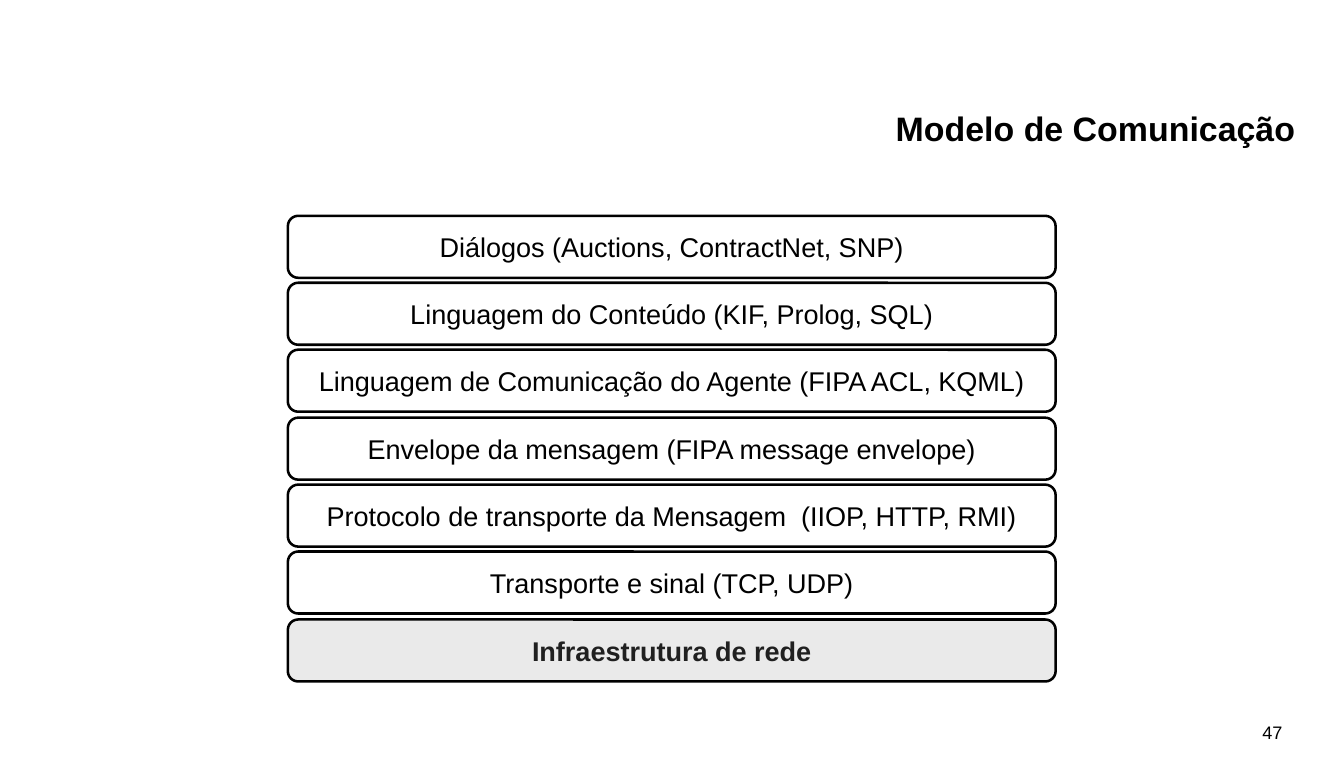
from pptx import Presentation
from pptx.dml.color import RGBColor
from pptx.enum.shapes import MSO_SHAPE as SHAPE
from pptx.enum.text import MSO_ANCHOR as ANCHOR, PP_ALIGN as ALIGN
from pptx.util import Emu, Inches, Pt

EMU_PER_PX = 914400 / 122

LAYERS = [
    "Diálogos (Auctions, ContractNet, SNP)",
    "Linguagem do Conteúdo (KIF, Prolog, SQL)",
    "Linguagem de Comunicação do Agente (FIPA ACL, KQML)",
    "Envelope da mensagem (FIPA message envelope)",
    "Protocolo de transporte da Mensagem  (IIOP, HTTP, RMI)",
    "Transporte e sinal (TCP, UDP)",
]
STACK_TOP = 216
STACK_SPAN = 404


def px(n):
    return Emu(round(n * EMU_PER_PX))


def color(hex_str):
    return RGBColor.from_string(hex_str)


def write(sp, text, size=16, ink="000000", bold=False, align=ALIGN.CENTER,
          anchor=ANCHOR.MIDDLE, wrap=True, inset_x=0, inset_y=0):
    tf = sp.text_frame
    tf.word_wrap = wrap
    tf.vertical_anchor = anchor
    tf.margin_left = tf.margin_right = px(inset_x)
    tf.margin_top = tf.margin_bottom = px(inset_y)
    p = tf.paragraphs[0]
    p.alignment = align
    r = p.add_run()
    r.text = text
    r.font.name = "Arial"
    r.font.size = Pt(size)
    r.font.bold = bold
    r.font.color.rgb = color(ink)


class Deck:
    line_color = "000000"
    line_width = 1.5
    corner = 0.167

    def __init__(self, width, height):
        self.prs = Presentation()
        self.prs.slide_width = Inches(width)
        self.prs.slide_height = Inches(height)
        self.s = self.prs.slides.add_slide(self.prs.slide_layouts[5])

    def title(self, x, y, w, h, text):
        sp = self.s.shapes.title
        sp.left, sp.top, sp.width, sp.height = map(px, (x, y, w, h))
        write(sp, text, size=20, bold=True, align=ALIGN.RIGHT, anchor=ANCHOR.TOP)

    def label(self, x, y, w, h, text, **fmt):
        sp = self.s.shapes.add_textbox(*map(px, (x, y, w, h)))
        write(sp, text, **fmt)

    def layer(self, row, text, fill=None, **fmt):
        y = STACK_TOP + STACK_SPAN * row // len(LAYERS)
        sp = self.s.shapes.add_shape(SHAPE.ROUNDED_RECTANGLE,
                                     *map(px, (288, y, 768, 62)))
        sp.adjustments[0] = self.corner
        sp.shadow.inherit = False
        if fill:
            sp.fill.solid()
            sp.fill.fore_color.rgb = color(fill)
        else:
            sp.fill.background()
        sp.line.color.rgb = color(self.line_color)
        sp.line.width = Pt(self.line_width)
        write(sp, text, wrap=False, **fmt)


def main():
    deck = Deck(11.02, 6.3)
    deck.title(191, 108, 1105, 96, "Modelo de Comunicação")
    deck.label(982, 712, 314, 41, "47", size=10.7, align=ALIGN.RIGHT,
               inset_x=13, inset_y=7)
    deck.layer(len(LAYERS), "Infraestrutura de rede", fill="EAEAEA",
               ink="202020", bold=True)
    for row, text in enumerate(LAYERS):
        deck.layer(row, text)
    deck.prs.save("out.pptx")


if __name__ == "__main__":
    main()
